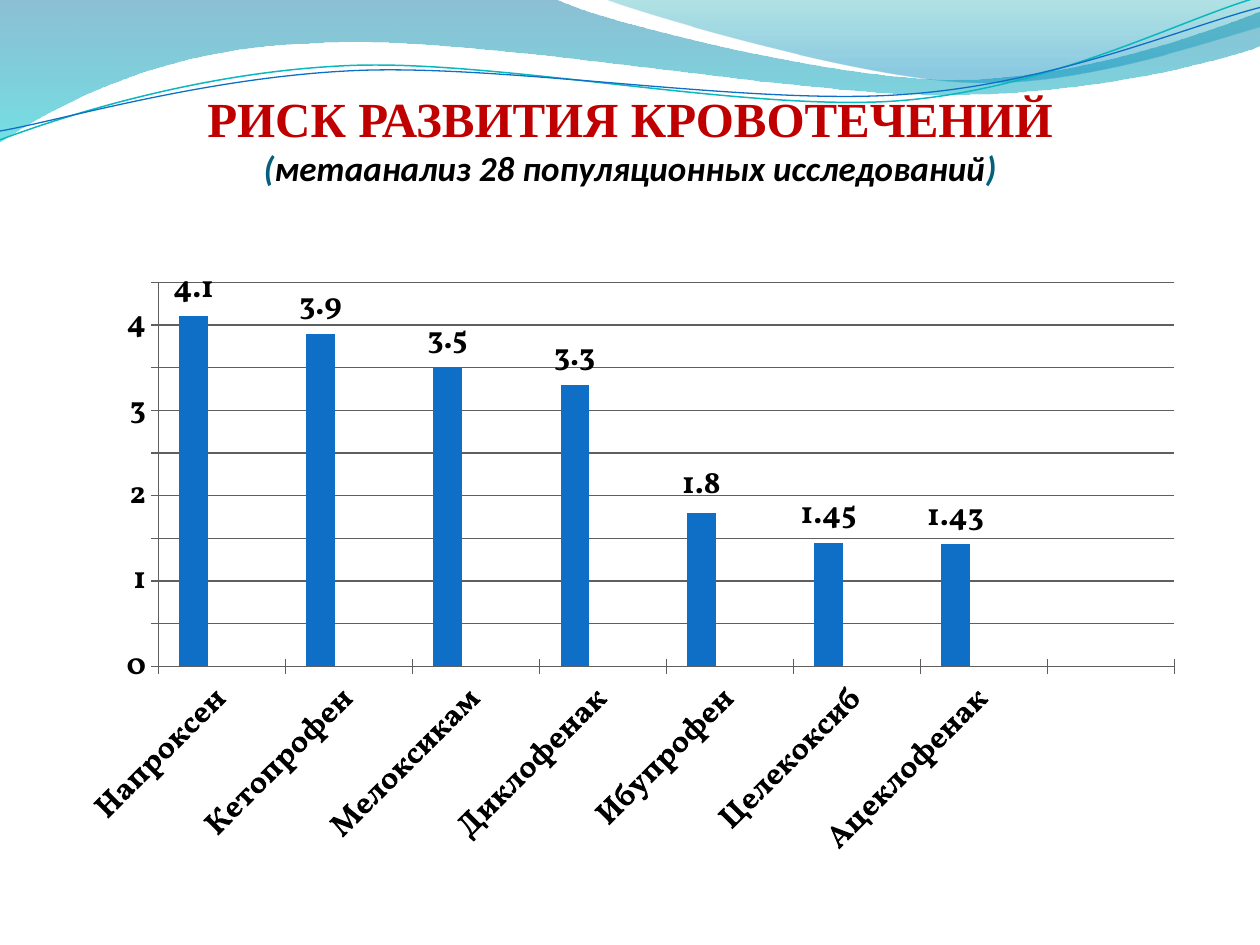
import math
from dataclasses import dataclass

from lxml import etree
from pptx import Presentation
from pptx.chart.data import CategoryChartData
from pptx.dml.color import RGBColor
from pptx.enum.chart import XL_CHART_TYPE, XL_LABEL_POSITION, XL_TICK_MARK
from pptx.enum.text import MSO_ANCHOR, MSO_AUTO_SIZE, PP_ALIGN
from pptx.oxml import parse_xml
from pptx.oxml.ns import nsdecls, qn
from pptx.util import Inches, Pt

COLUMN_CLUSTERED = XL_CHART_TYPE.COLUMN_CLUSTERED
OUTSIDE_END = XL_LABEL_POSITION.OUTSIDE_END
CROSS = XL_TICK_MARK.CROSS
BOTTOM = MSO_ANCHOR.BOTTOM
NO_AUTOFIT = MSO_AUTO_SIZE.NONE
CENTER = PP_ALIGN.CENTER

WIDTH, HEIGHT = Inches(10), Inches(7.5)
MARGIN = 0.05  # share of the slide width
BLACK, GRAY, TITLE_RED, TEAL = "000000", "5F5F5F", "C00000", "04617B"

Point = tuple[float, float]


@dataclass
class GradientStop:
    position: int
    color: str
    opacity: int


@dataclass
class Wave:
    """Outline in inches: one point is a straight segment, three are a Bezier."""
    start: Point
    segments: list[tuple[Point, ...]]
    gradient: tuple[GradientStop, ...] = ()
    line_color: str = ""
    line_width: float = 0
    rotation: float = 0
    center: Point = (0, 0)


WAVES = [
    Wave((0, 0), [
        ((4.4, -0.01),),
        ((4.76, 0.17), (6.64, 0.63), (7.58, 0.63)),
        ((8.53, 0.63), (9.58, 0.26), (10, 0.09)),
        ((10.01, 0.36),),
        ((9.83, 0.44), (8.7, 0.76), (7.46, 0.75)),
        ((6.22, 0.75), (3.82, 0.28), (2.57, 0.34)),
        ((1.29, 0.36), (0.46, 0.83), (-0.01, 1.13)),
        ((0, 0),),
    ], gradient=(GradientStop(0, "0074A1", 45), GradientStop(100, "00C6CF", 55))),
    Wave((4.79, -0.01), [
        ((5.09, 0.11), (6.82, 0.62), (7.69, 0.65)),
        ((8.56, 0.69), (9.61, 0.32), (10, 0.21)),
        ((10, 0),),
        ((4.79, -0.01),),
    ], gradient=(GradientStop(0, "00A1A9", 30), GradientStop(80, "008BBF", 45))),
    Wave((0, 1.11), [
        ((0.48, 0.93), (1.58, 0.57), (2.77, 0.52)),
        ((3.95, 0.47), (5.93, 0.89), (7.13, 0.8)),
        ((8.33, 0.71), (9.38, 0.15), (9.98, -0.02)),
    ], line_color="0AB8BF", line_width=0.85, rotation=-2.7, center=(4.99, 0.57)),
    Wave((0, 1.04), [
        ((0.47, 0.96), (1.64, 0.61), (2.83, 0.56)),
        ((4.03, 0.51), (5.97, 0.84), (7.17, 0.75)),
        ((8.36, 0.67), (9.41, 0.21), (10, 0.06)),
    ], line_color="0F6FC6", line_width=0.75, rotation=-2.7, center=(5, 0.59)),
]

# The last category is an empty slot at the right of the chart
RISKS = {"Напроксен": 4.1, "Кетопрофен": 3.9, "Мелоксикам": 3.5, "Диклофенак": 3.3,
         "Ибупрофен": 1.8, "Целекоксиб": 1.45, "Ацеклофенак": 1.43, "": None}
SERIES_COLORS = ["0F6FC6", "009DD9", "0BD0D9"]


def rgb(color: str) -> RGBColor:
    return RGBColor.from_string(color)


def unrotate(wave: Wave, point: Point) -> Point:
    """Give the point's place in EMU before the shape's rotation is applied."""
    angle = math.radians(-wave.rotation)
    dx, dy = point[0] - wave.center[0], point[1] - wave.center[1]
    return (Inches(wave.center[0] + dx * math.cos(angle) - dy * math.sin(angle)),
            Inches(wave.center[1] + dx * math.sin(angle) + dy * math.cos(angle)))


def bend_segments(shape, wave: Wave) -> None:
    """Join the three line segments of each Bezier into one curve."""
    lines = iter(shape._element.findall(".//" + qn("a:lnTo")))
    for segment in wave.segments:
        group = [next(lines) for _ in segment]
        if len(group) == 3:
            curve = etree.Element(qn("a:cubicBezTo"))
            group[0].addprevious(curve)
            for line in group:
                curve.append(line[0])
                line.getparent().remove(line)


def set_gradient(shape, stops: tuple[GradientStop, ...]) -> None:
    """Fill the shape from top to bottom with translucent colours."""
    stop_xml = "".join(
        f'<a:gs pos="{stop.position * 1000}"><a:srgbClr val="{stop.color}">'
        f'<a:alpha val="{stop.opacity * 1000}"/></a:srgbClr></a:gs>' for stop in stops)
    gradient = parse_xml(f'<a:gradFill {nsdecls("a")}><a:gsLst>{stop_xml}</a:gsLst>'
                         '<a:lin ang="5400000" scaled="0"/></a:gradFill>')
    shape.fill.background()
    properties = shape._element.spPr
    properties.replace(properties.find(qn("a:noFill")), gradient)


def draw_wave(slide, wave: Wave) -> None:
    points = [unrotate(wave, point) for segment in wave.segments for point in segment]
    builder = slide.shapes.build_freeform(*unrotate(wave, wave.start), scale=1.0)
    builder.add_line_segments(points, close=bool(wave.gradient))
    shape = builder.convert_to_shape()
    bend_segments(shape, wave)
    shape.rotation = wave.rotation
    shape.shadow.inherit = False
    if wave.gradient:
        shape.line.fill.background()
        set_gradient(shape, wave.gradient)
    else:
        shape.fill.background()
        shape.line.color.rgb = rgb(wave.line_color)
        shape.line.width = Pt(wave.line_width)


def add_run(paragraph, text: str, font_name: str, size: int, color: str, italic: bool) -> None:
    run = paragraph.add_run()
    run.text = text
    run.font.name, run.font.size, run.font.italic = font_name, Pt(size), italic
    run.font.color.rgb = rgb(color)


def write_title(slide) -> None:
    title = slide.shapes.title
    slide.shapes._spTree.append(title._element)  # in front of the waves
    title.left, title.top = int(WIDTH * MARGIN), 0
    title.width, title.height = int(WIDTH * (1 - 2 * MARGIN)), int(HEIGHT * 0.2)
    frame = title.text_frame
    frame.auto_size, frame.vertical_anchor, frame.word_wrap = NO_AUTOFIT, BOTTOM, True
    frame.margin_left = frame.margin_right = frame.margin_bottom = 0
    frame.margin_top = Inches(0.05)
    paragraph = frame.paragraphs[0]
    paragraph.alignment = CENTER
    paragraph.font.bold = True
    add_run(paragraph, "РИСК РАЗВИТИЯ КРОВОТЕЧЕНИЙ", "Times New Roman", 28, TITLE_RED, False)
    paragraph.add_line_break()
    for text, color in (("(", TEAL), ("метаанализ 28 популяционных исследований", BLACK),
                        (")", TEAL)):
        add_run(paragraph, text, "Calibri", 20, color, True)


def add_risk_chart(slide) -> None:
    data = CategoryChartData()
    data.categories = list(RISKS)
    for number in range(1, len(SERIES_COLORS) + 1):
        data.add_series(f"Series {number}",
                        list(RISKS.values()) if number == 1 else [None] * len(RISKS))
    chart = slide.shapes.add_chart(
        COLUMN_CLUSTERED, int(WIDTH * MARGIN), Inches(2.12),
        int(WIDTH * (1 - 2 * MARGIN)), int(HEIGHT * 0.64), data).chart
    chart.has_legend = chart.has_title = False
    chart.font.name, chart.font.size = "Vollkorn", Pt(18)
    chart.font.color.rgb = rgb(BLACK)

    # Columns and value labels
    plot = chart.plots[0]
    plot.gap_width, plot.overlap, plot.vary_by_categories = 150, 0, False
    for series, color in zip(plot.series, SERIES_COLORS):
        series.format.fill.solid()
        series.format.fill.fore_color.rgb = rgb(color)
    labels = plot.series[0].data_labels
    labels.show_value, labels.position = True, OUTSIDE_END
    labels.font.bold = True

    # Axes and gridlines
    category_axis, value_axis = chart.category_axis, chart.value_axis
    for axis in (category_axis, value_axis):
        axis.major_tick_mark = CROSS
        axis.tick_labels.font.bold = True
    next(category_axis._element.iter(qn("a:bodyPr"))).set("rot", str(-45 * 60000))
    value_axis.minimum_scale, value_axis.maximum_scale, value_axis.major_unit = 0, 4.5, 0.5
    value_axis.has_major_gridlines = True
    for part in (category_axis, value_axis, value_axis.major_gridlines):
        part.format.line.color.rgb = rgb(GRAY)
        part.format.line.width = Pt(0.75)


def main() -> None:
    presentation = Presentation()
    presentation.slide_width, presentation.slide_height = WIDTH, HEIGHT
    slide = presentation.slides.add_slide(presentation.slide_layouts[5])
    for wave in WAVES:
        draw_wave(slide, wave)
    write_title(slide)
    add_risk_chart(slide)
    presentation.save("out.pptx")


if __name__ == "__main__":
    main()
